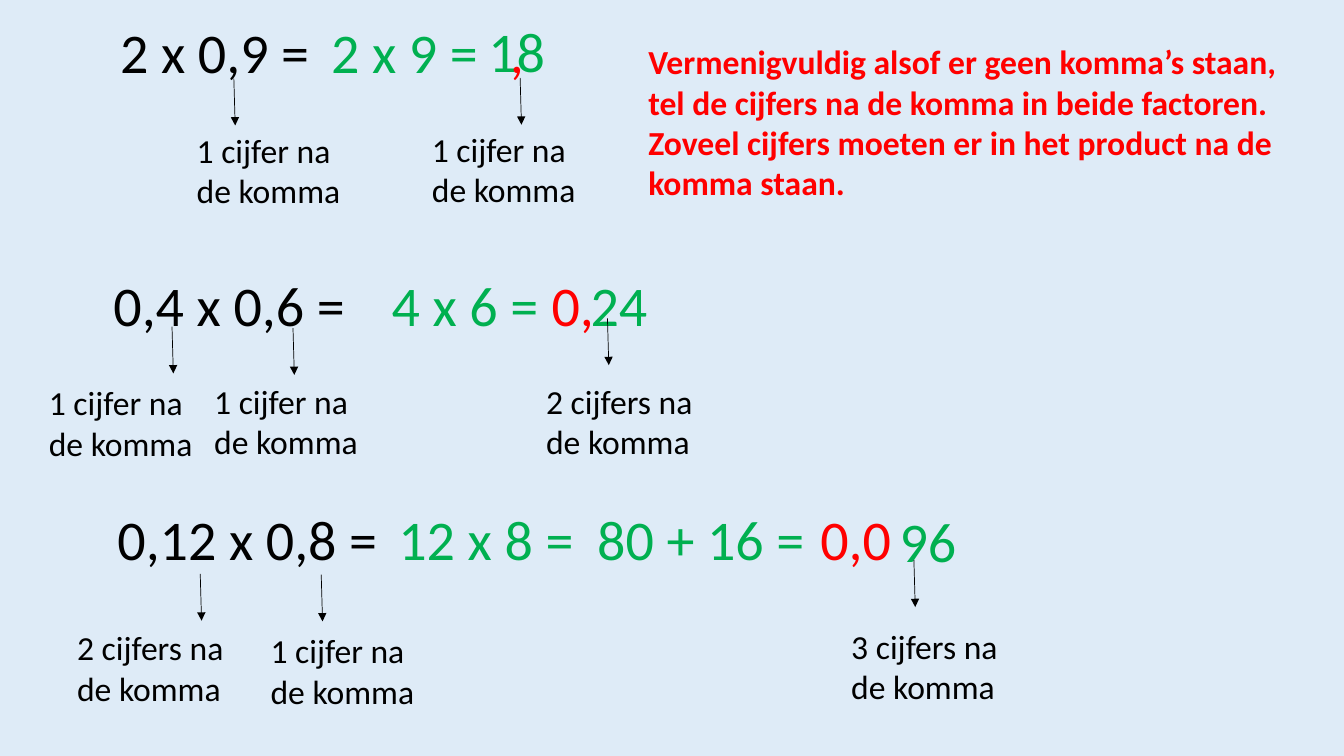
from lxml import etree
from pptx import Presentation
from pptx.dml.color import RGBColor
from pptx.enum.shapes import MSO_CONNECTOR
from pptx.enum.text import MSO_AUTO_SIZE
from pptx.oxml.ns import qn
from pptx.util import Inches, Pt

STRAIGHT = MSO_CONNECTOR.STRAIGHT
GROW = MSO_AUTO_SIZE.SHAPE_TO_FIT_TEXT
BLACK = RGBColor(0x00, 0x00, 0x00)
GREEN = RGBColor(0x00, 0xB0, 0x50)
RED = RGBColor(0xFF, 0x00, 0x00)
PALE_BLUE = RGBColor(0xDE, 0xEB, 0xF7)

BLANK_LAYOUT = 6
GRID = 100
SUM_ROWS = 10.3
NOTE_COLUMNS, NOTE_ROWS = 14.4, 12.1
ARROW_COLUMNS, ARROW_ROWS = 0.1, 6.2

RULE = [
    "Vermenigvuldig alsof er geen komma’s staan, tel de cijfers na de komma in beide factoren. ",
    "Zoveel cijfers moeten er in het product na de komma staan.",
]

SUMS = [
    ("2 x 0,9 =", 8.2, 1.7, 16, BLACK),
    ("2 x 9 =", 23.9, 1.7, 13.4, GREEN),
    ("18", 35.6, 1.5, 6.8, GREEN),
    (",", 37.2, 1.7, 9.5, RED),
    ("0,4 x 0,6 =", 7.7, 35.1, 19.2, BLACK),
    ("4 x 6 =", 28.4, 35.1, 33.9, GREEN),
    ("0,", 40.3, 35.1, 5.3, RED),
    ("24", 43.2, 35.1, 6.5, GREEN),
    ("0,12 x 0,8 =", 8, 66.1, 22, BLACK),
    ("12 x 8 =", 28.9, 66.1, 14.9, GREEN),
    ("80 + 16 =", 43.7, 66.1, 18, GREEN),
    ("96", 66.2, 66.4, 10, GREEN),
    ("0,0", 60.3, 66.1, 10, RED),
]

DIGIT_COUNTS = [
    ("1 cijfer", (17.4, 10.4), (13.9, 16.5)),
    ("1 cijfer", (38.7, 10.3), (31.4, 16.4)),
    ("1 cijfer", (12.8, 43.2), (2.9, 49.9)),
    ("1 cijfer", (21.8, 43.4), (15.2, 49.7)),
    ("2 cijfers", (45.2, 42.1), (39.9, 49.7)),
    ("2 cijfers", (14.9, 75.9), (5, 82.3)),
    ("1 cijfer", (23.9, 76), (19.4, 82.7)),
    ("3 cijfers", (68, 74.1), (62.6, 82.1)),
]


class Board:
    """Draws sums, notes and arrows on one slide, measured in grid columns and rows."""

    font = "Calibri"
    sum_size = Pt(40)
    note_size = Pt(24)
    arrow_width = Pt(0.5)

    def __init__(self, deck):
        self.column = deck.slide_width / GRID
        self.row = deck.slide_height / GRID
        self.slide = deck.slides.add_slide(deck.slide_layouts[BLANK_LAYOUT])
        fill = self.slide.background.fill
        fill.solid()
        fill.fore_color.rgb = PALE_BLUE

    def point(self, column, row):
        return round(column * self.column), round(row * self.row)

    def text(self, lines, start, extent, size, color, bold=False):
        box = self.slide.shapes.add_textbox(*self.point(*start), *self.point(*extent))
        frame = box.text_frame
        frame.word_wrap = True
        frame.auto_size = GROW
        paragraph = frame.paragraphs[0]
        for index, line in enumerate(lines):
            if index:
                paragraph.add_line_break()
            run = paragraph.add_run()
            run.text = line
            run.font.name = self.font
            run.font.size = size
            run.font.bold = bold
            run.font.color.rgb = color

    def sum(self, wording, column, row, columns, color):
        self.text([wording], (column, row), (columns, SUM_ROWS), self.sum_size, color)

    def note(self, wording, start):
        self.text([wording], start, (NOTE_COLUMNS, NOTE_ROWS), self.note_size, BLACK)

    def rule(self, lines, start, extent):
        self.text(lines, start, extent, self.note_size, RED, bold=True)

    def arrow(self, column, row):
        tip = self.point(column + ARROW_COLUMNS, row + ARROW_ROWS)
        arrow = self.slide.shapes.add_connector(STRAIGHT, *self.point(column, row), *tip)
        arrow.line.color.rgb = BLACK
        arrow.line.width = self.arrow_width
        properties = arrow.line._get_or_add_ln()
        etree.SubElement(properties, qn("a:tailEnd"), type="triangle")
        etree.SubElement(properties.getparent(), qn("a:effectLst"))


def main():
    deck = Presentation()
    deck.slide_width = Inches(13.33)
    deck.slide_height = Inches(7.5)
    board = Board(deck)
    board.rule(RULE, (47.5, 4.8), (49.7, 22.9))
    for exercise_part in SUMS:
        board.sum(*exercise_part)
    for count, digit, note_start in DIGIT_COUNTS:
        board.arrow(*digit)
        board.note(f"{count} na de komma", note_start)
    deck.save("out.pptx")


if __name__ == "__main__":
    main()
